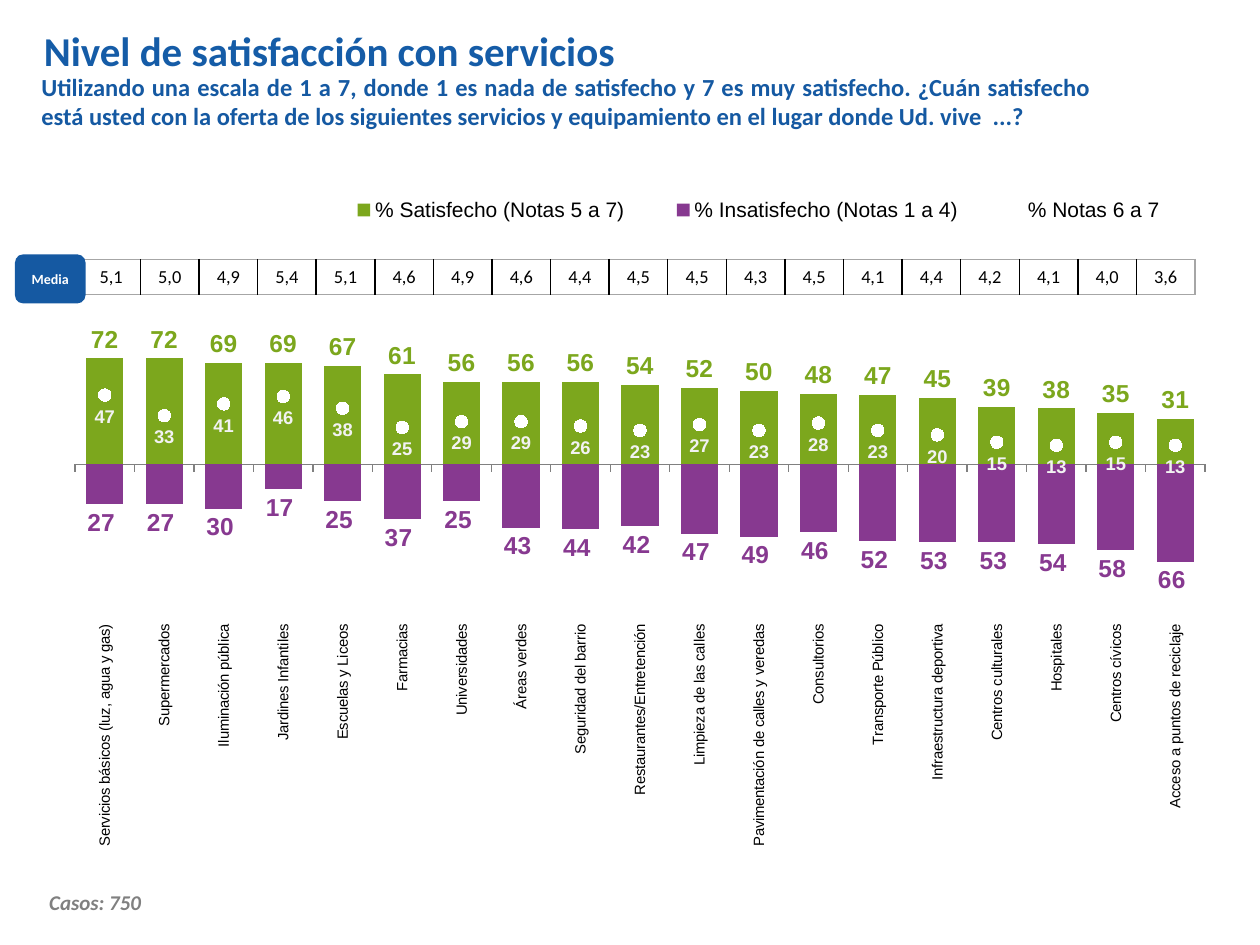
from copy import deepcopy
from dataclasses import dataclass

from lxml import etree
from pptx import Presentation
from pptx.chart.data import CategoryChartData
from pptx.dml.color import RGBColor
from pptx.enum.chart import (XL_CHART_TYPE, XL_LABEL_POSITION, XL_LEGEND_POSITION,
                             XL_MARKER_STYLE, XL_TICK_LABEL_POSITION, XL_TICK_MARK)
from pptx.enum.shapes import MSO_SHAPE
from pptx.enum.text import MSO_ANCHOR, MSO_AUTO_SIZE, PP_ALIGN
from pptx.oxml import parse_xml
from pptx.oxml.ns import nsdecls, qn
from pptx.util import Pt

CENTER, JUSTIFY = PP_ALIGN.CENTER, PP_ALIGN.JUSTIFY
TOP, MIDDLE = MSO_ANCHOR.TOP, MSO_ANCHOR.MIDDLE
FIT_SHAPE, FIXED_SIZE = MSO_AUTO_SIZE.SHAPE_TO_FIT_TEXT, MSO_AUTO_SIZE.NONE
ROUNDED = MSO_SHAPE.ROUNDED_RECTANGLE
COLUMNS = XL_CHART_TYPE.COLUMN_CLUSTERED
ABOVE, BELOW = XL_LABEL_POSITION.OUTSIDE_END, XL_LABEL_POSITION.BELOW
LOW, OUTSIDE = XL_TICK_LABEL_POSITION.LOW, XL_TICK_MARK.OUTSIDE
CIRCLE, RIGHT = XL_MARKER_STYLE.CIRCLE, XL_LEGEND_POSITION.RIGHT


@dataclass
class Theme:
    body_font: str = "Calibri"
    chart_font: str = "Arial"
    title_blue: str = "155CA7"
    blue: str = "1559A2"
    green: str = "7CA71D"
    purple: str = "873990"
    black: str = "000000"
    white: str = "FFFFFF"
    grey: str = "808080"
    border_grey: str = "A6A6A6"
    pale: str = "F2F2F2"
    title_size: float = 23.4
    question_size: float = 14
    note_size: float = 12
    mean_size: float = 10.5
    badge_size: float = 8
    chart_size: float = 10
    legend_size: float = 12
    category_size: float = 8.5
    bar_label_size: float = 14
    dot_label_size: float = 10.5


SERVICES = [  # name, mean, satisfied, dissatisfied, marks 6 to 7
    ("Servicios básicos (luz, agua y gas)", "5,1", 72, 27, 47),
    ("Supermercados", "5,0", 72, 27, 33),
    ("Iluminación pública", "4,9", 69, 30, 41),
    ("Jardines Infantiles", "5,4", 69, 17, 46),
    ("Escuelas y Liceos", "5,1", 67, 25, 38),
    ("Farmacias", "4,6", 61, 37, 25),
    ("Universidades", "4,9", 56, 25, 29),
    ("Áreas verdes", "4,6", 56, 43, 29),
    ("Seguridad del barrio", "4,4", 56, 44, 26),
    ("Restaurantes/Entretención", "4,5", 54, 42, 23),
    ("Limpieza de las calles", "4,5", 52, 47, 27),
    ("Pavimentación de calles y veredas", "4,3", 50, 49, 23),
    ("Consultorios", "4,5", 48, 46, 28),
    ("Transporte Público", "4,1", 47, 52, 23),
    ("Infraestructura deportiva", "4,4", 45, 53, 20),
    ("Centros culturales", "4,2", 39, 53, 15),
    ("Hospitales", "4,1", 38, 54, 13),
    ("Centros cívicos", "4,0", 35, 58, 15),
    ("Acceso a puntos de reciclaje", "3,6", 31, 66, 13),
]


def set_font(font, name, size, color, bold=False, italic=False):
    font.name, font.size, font.bold, font.italic = name, Pt(size), bold, italic
    font.color.rgb = RGBColor.from_string(color)


def write(frame, text, *, size, color, font="Calibri", bold=False, italic=False,
          align=None, anchor=TOP, wrap=True):
    frame.word_wrap = wrap
    frame.vertical_anchor = anchor
    paragraph = frame.paragraphs[0]
    paragraph.alignment = align
    run = paragraph.add_run()
    run.text = text
    set_font(run.font, font, size, color, bold, italic)


def place(part, index, x, y, w, h, inner=False):
    """Give a chart part a manual layout in fractions of the chart."""
    for old in part.findall(qn("c:layout")):
        part.remove(old)
    settings = [("layoutTarget", "inner")] if inner else []
    settings += [("xMode", "edge"), ("yMode", "edge"), ("x", x), ("y", y), ("w", w), ("h", h)]
    body = "".join(f'<c:{tag} val="{value}"/>' for tag, value in settings)
    part.insert(index, parse_xml(
        f'<c:layout {nsdecls("c")}><c:manualLayout>{body}</c:manualLayout></c:layout>'))


def move_last_series_to_line(chart):
    bar = chart.plots[0]._element
    series = bar.findall(qn("c:ser"))[-1]
    for bar_only in series.findall(qn("c:invertIfNegative")):
        series.remove(bar_only)
    line = parse_xml(f'<c:lineChart {nsdecls("c")}><c:grouping val="standard"/>'
                     '<c:varyColors val="0"/><c:marker val="1"/></c:lineChart>')
    line.insert(2, series)
    for axis_id in bar.findall(qn("c:axId")):
        line.append(deepcopy(axis_id))
    bar.addnext(line)


class SlideBuilder:
    def __init__(self, slide, theme):
        self.shapes, self.theme = slide.shapes, theme

    def text(self, box, text, grow=True, **style):
        frame = self.shapes.add_textbox(*map(Pt, box)).text_frame
        write(frame, text, font=self.theme.body_font, **style)
        frame.auto_size = FIT_SHAPE if grow else FIXED_SIZE

    def badge(self, box, text):
        badge = self.shapes.add_shape(ROUNDED, *map(Pt, box))
        badge.shadow.inherit = False
        badge.fill.solid()
        badge.fill.fore_color.rgb = RGBColor.from_string(self.theme.blue)
        badge.line.fill.background()
        frame = badge.text_frame
        frame.margin_left = frame.margin_right = 0
        write(frame, text, size=self.theme.badge_size, color=self.theme.white,
              font=self.theme.body_font, bold=True, align=CENTER, anchor=MIDDLE)

    def border(self, cell, side, color):
        properties = cell._tc.get_or_add_tcPr()
        line = etree.SubElement(properties, qn(f"a:ln{side}"), w=str(Pt(1)))
        fill = etree.SubElement(line, qn("a:solidFill"))
        etree.SubElement(fill, qn("a:srgbClr"), val=color)

    def row(self, box, values):
        t = self.theme
        table = self.shapes.add_table(1, len(values), *map(Pt, box)).table
        table.first_row = table.horz_banding = False
        last = len(values) - 1
        for i, value in enumerate(values):
            table.columns[i].width = Pt(box[2] / len(values))
            cell = table.cell(0, i)
            cell.margin_left = cell.margin_right = 0
            cell.vertical_anchor = MIDDLE
            write(cell.text_frame, value, size=t.mean_size, color=t.black,
                  font=t.body_font, align=CENTER, anchor=None, wrap=None)
            self.border(cell, "L", t.black if i else t.border_grey)
            self.border(cell, "R", t.black if i < last else t.border_grey)
            for side in "TB":
                self.border(cell, side, t.border_grey)
            cell.fill.background()

    def labels(self, series, color, size, position, number_format="0"):
        labels = series.data_labels
        labels.show_value = True
        labels.number_format, labels.number_format_is_linked = number_format, False
        labels.position = position
        set_font(labels.font, self.theme.chart_font, size, color, bold=True)

    def satisfaction_chart(self, box, services):
        t = self.theme
        names, _, satisfied, dissatisfied, top_marks = zip(*services)
        data = CategoryChartData()
        data.categories = names
        data.add_series("% Satisfecho (Notas 5 a 7)", satisfied)
        data.add_series("% Insatisfecho (Notas 1 a 4)", [-value for value in dissatisfied])
        data.add_series("% Notas 6 a 7", top_marks)
        chart = self.shapes.add_chart(COLUMNS, *map(Pt, box), data).chart
        chart.has_title = False
        set_font(chart.font, t.body_font, t.chart_size, t.black)
        move_last_series_to_line(chart)

        bars, dots = chart.plots
        bars.gap_width, bars.overlap, bars.vary_by_categories = 60, 100, False
        formats = ((t.green, "0"), (t.purple, "#,##0_ ;#,##0\\ "))
        for series, (color, number_format) in zip(bars.series, formats):
            series.invert_if_negative = False
            series.format.fill.solid()
            series.format.fill.fore_color.rgb = RGBColor.from_string(color)
            self.labels(series, color, t.bar_label_size, ABOVE, number_format)

        marks = dots.series[0]
        marks.smooth = False
        marks.format.line.fill.background()
        marks.marker.style, marks.marker.size = CIRCLE, 7
        marks.marker.format.fill.solid()
        marks.marker.format.fill.fore_color.rgb = RGBColor.from_string(t.white)
        marks.marker.format.line.fill.background()
        self.labels(marks, t.pale, t.dot_label_size, BELOW)

        values, categories = chart.value_axis, chart.category_axis
        values.minimum_scale, values.maximum_scale = -100, 110
        values.has_major_gridlines = values.visible = False
        categories.tick_label_position = LOW
        categories.major_tick_mark = OUTSIDE
        categories.format.line.color.rgb = RGBColor.from_string(t.grey)
        set_font(categories.tick_labels.font, t.chart_font, t.category_size, t.black)
        rotation = categories._element.find(qn("c:txPr")).find(qn("a:bodyPr"))
        rotation.set("rot", "-5400000")
        rotation.set("vert", "horz")

        chart.has_legend = True
        legend = chart.legend
        legend.position, legend.include_in_layout = RIGHT, False
        set_font(legend.font, t.chart_font, t.legend_size, t.black)
        place(legend._element, 1, 0.21, 0, 0.79, 0.06)
        place(chart._chartSpace.chart.plotArea, 0, 0, 0.17, 1, 0.47, inner=True)


def main():
    deck = Presentation()
    deck.slide_width, deck.slide_height = Pt(720), Pt(540)
    theme = Theme()
    page = SlideBuilder(deck.slides.add_slide(deck.slide_layouts[6]), theme)
    page.text((21, 504.5, 78.5, 21.6), "Casos: 750", size=theme.note_size,
              color=theme.grey, bold=True, italic=True, wrap=False)
    page.satisfaction_chart((42.5, 108.7, 646.5, 376.5), SERVICES)
    page.text((16.5, 37.4, 614, 58.3),
              "Utilizando una escala de 1 a 7, donde 1 es nada de satisfecho y 7 es muy "
              "satisfecho. ¿Cuán satisfecho está usted con la oferta de los siguientes "
              "servicios y equipamiento en el lugar donde Ud. vive  ...?",
              size=theme.question_size, color=theme.blue, bold=True, align=JUSTIFY)
    page.text((18, 5.8, 615, 46), "Nivel de satisfacción con servicios", grow=False,
              size=theme.title_size, color=theme.title_blue, bold=True, anchor=MIDDLE)
    page.row((46.8, 148.3, 636.5, 20), [mean for _, mean, *_ in SERVICES])
    page.badge((8.6, 145.4, 40.3, 28), "Media")
    deck.save("out.pptx")


if __name__ == "__main__":
    main()
